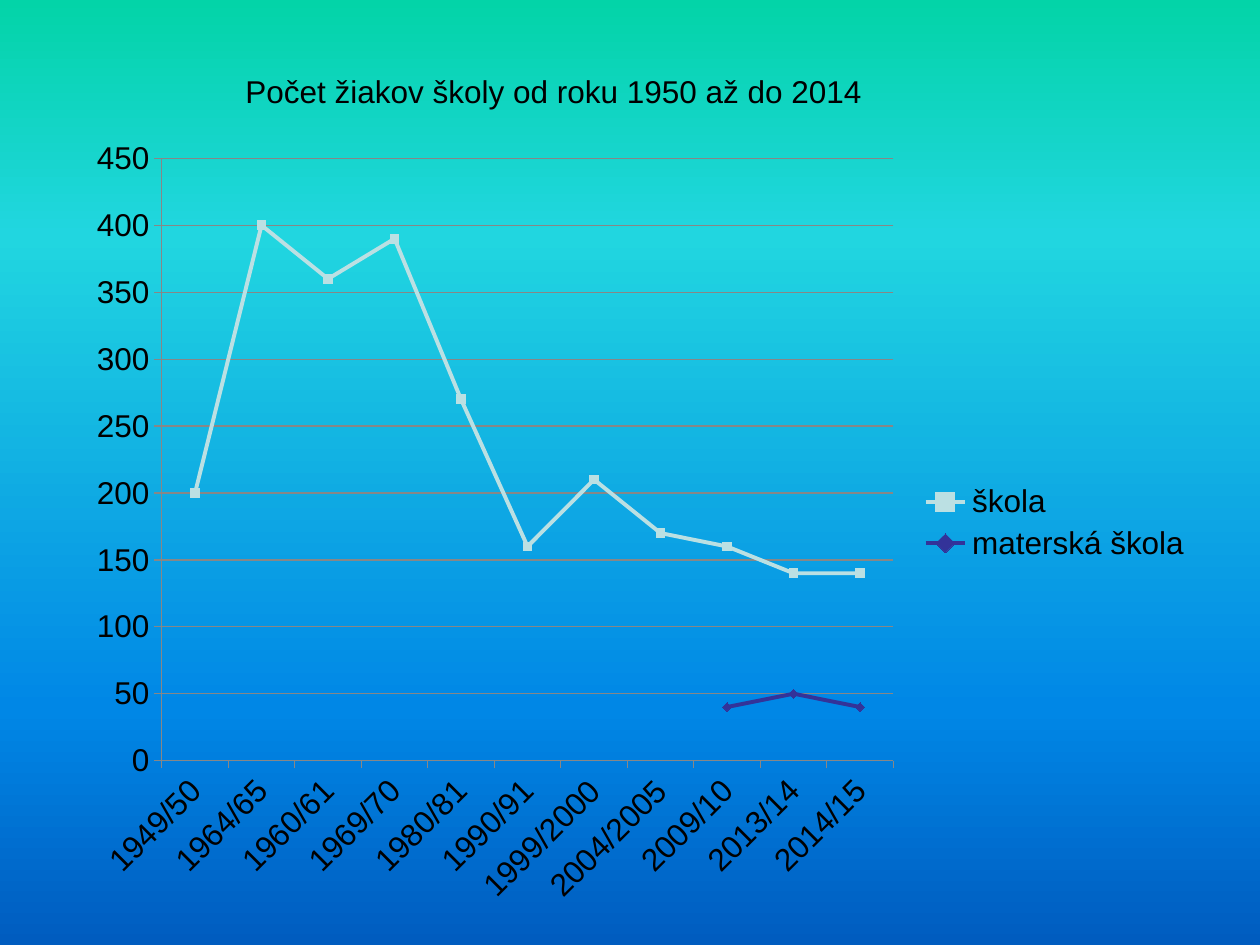
from dataclasses import dataclass

from lxml import etree
from pptx import Presentation
from pptx import util as u
from pptx.chart.data import CategoryChartData
from pptx.dml.color import RGBColor
from pptx.enum import chart as ch
from pptx.enum import text
from pptx.oxml.ns import qn

BLACK = RGBColor(0x00, 0x00, 0x00)
GREY = RGBColor(0x87, 0x87, 0x87)
PALE_TEAL = RGBColor(0xBB, 0xE0, 0xE3)
INDIGO = RGBColor(0x33, 0x33, 0x99)
GREEN = RGBColor(0x03, 0xD4, 0xA8)
CYAN = RGBColor(0x21, 0xD6, 0xE0)
BLUE = RGBColor(0x00, 0x87, 0xE6)
NAVY = RGBColor(0x00, 0x5C, 0xBF)
FONT = "Arial"
SIZE = u.Pt(18)


@dataclass
class Stop:
    percent: int
    color: RGBColor


@dataclass
class Line:
    name: str
    values: list
    color: RGBColor
    marker: ch.XL_MARKER_STYLE


@dataclass
class PercentBox:
    x: float
    y: float
    w: float
    h: float


STOPS = [Stop(0, GREEN), Stop(25, CYAN), Stop(75, BLUE), Stop(100, NAVY)]
YEARS = ["1949/50", "1964/65", "1960/61", "1969/70", "1980/81", "1990/91",
         "1999/2000", "2004/2005", "2009/10", "2013/14", "2014/15"]
LINES = [
    Line("škola", [200, 400, 360, 390, 270, 160, 210, 170, 160, 140, 140],
         PALE_TEAL, ch.XL_MARKER_STYLE.SQUARE),
    Line("materská škola", [None] * 8 + [40, 50, 40],
         INDIGO, ch.XL_MARKER_STYLE.DIAMOND),
]
PLOT_BOX = PercentBox(7.73, 4.25, 64.65, 75.87)
LEGEND_BOX = PercentBox(74.65, 44.5, 24, 11.25)


def set_background(s, stops: list[Stop]) -> None:
    fill = s.background.fill
    fill.gradient()
    fill.gradient_angle = 270
    gs_list = s.element.find(".//" + qn("a:gsLst"))
    for gs in list(gs_list):
        gs_list.remove(gs)
    for stop in stops:
        gs = etree.SubElement(gs_list, qn("a:gs"), pos=str(stop.percent * 1000))
        etree.SubElement(gs, qn("a:srgbClr"), val=str(stop.color))


def set_font(font) -> None:
    font.name = FONT
    font.size = SIZE
    font.color.rgb = BLACK


def set_line(line, color: RGBColor, width: float) -> None:
    line.color.rgb = color
    line.width = u.Pt(width)


def set_layout(parent, index: int, box: PercentBox, inner: bool = False) -> None:
    for old in parent.findall(qn("c:layout")):
        parent.remove(old)
    layout = etree.Element(qn("c:layout"))
    parent.insert(index, layout)
    manual = etree.SubElement(layout, qn("c:manualLayout"))
    if inner:
        etree.SubElement(manual, qn("c:layoutTarget"), val="inner")
    for tag in ("xMode", "yMode"):
        etree.SubElement(manual, qn("c:" + tag), val="edge")
    for tag, value in zip("xywh", (box.x, box.y, box.w, box.h)):
        etree.SubElement(manual, qn("c:" + tag), val=f"{value / 100:.4f}")


def add_line_chart(s, lines: list[Line]) -> None:
    data = CategoryChartData()
    data.categories = YEARS
    for line in lines:
        data.add_series(line.name, line.values)
    chart = s.shapes.add_chart(
        ch.XL_CHART_TYPE.LINE_MARKERS, u.Pt(42.5), u.Pt(71.3),
        u.Pt(646.6), u.Pt(453.6), data).chart
    set_font(chart.font)
    chart.has_title = False
    chart.has_legend = True
    chart.legend.position = ch.XL_LEGEND_POSITION.RIGHT
    chart.legend.include_in_layout = False

    for axis in (chart.category_axis, chart.value_axis):
        axis.major_tick_mark = ch.XL_TICK_MARK.OUTSIDE
        axis.minor_tick_mark = ch.XL_TICK_MARK.NONE
        set_line(axis.format.line, GREY, 0.75)
    set_font(chart.category_axis.tick_labels.font)
    labels = chart.element.find(".//" + qn("c:catAx") + "/" + qn("c:txPr"))
    labels.find(qn("a:bodyPr")).set("rot", "-2700000")
    values = chart.value_axis
    values.minimum_scale, values.maximum_scale, values.major_unit = 0, 450, 50
    values.has_major_gridlines = True
    set_line(values.major_gridlines.format.line, GREY, 0.75)

    plot = chart.plots[0]
    plot.vary_by_categories = False
    for series, line in zip(plot.series, lines):
        series.smooth = False
        set_line(series.format.line, line.color, 2.25)
        series.marker.style = line.marker
        series.marker.size = 5
        series.marker.format.fill.solid()
        series.marker.format.fill.fore_color.rgb = line.color
        set_line(series.marker.format.line, line.color, 0.75)

    set_layout(chart.element.find(".//" + qn("c:plotArea")), 0, PLOT_BOX, True)
    set_layout(chart.element.find(".//" + qn("c:legend")), 1, LEGEND_BOX)


def add_title(s, title: str) -> None:
    sp = s.shapes.add_textbox(u.Pt(133.2), u.Pt(37.4), u.Pt(408.2), u.Pt(28.8))
    tf = sp.text_frame
    tf.word_wrap = True
    tf.auto_size = text.MSO_AUTO_SIZE.SHAPE_TO_FIT_TEXT
    p = tf.paragraphs[0]
    r = p.add_run()
    r.text = title
    set_font(r.font)


def main() -> None:
    prs = Presentation()
    prs.slide_width, prs.slide_height = u.Pt(720), u.Pt(540)
    s = prs.slides.add_slide(prs.slide_layouts[6])
    set_background(s, STOPS)
    add_line_chart(s, LINES)
    add_title(s, "Počet žiakov školy od roku 1950 až do 2014")
    prs.save("out.pptx")


if __name__ == "__main__":
    main()
